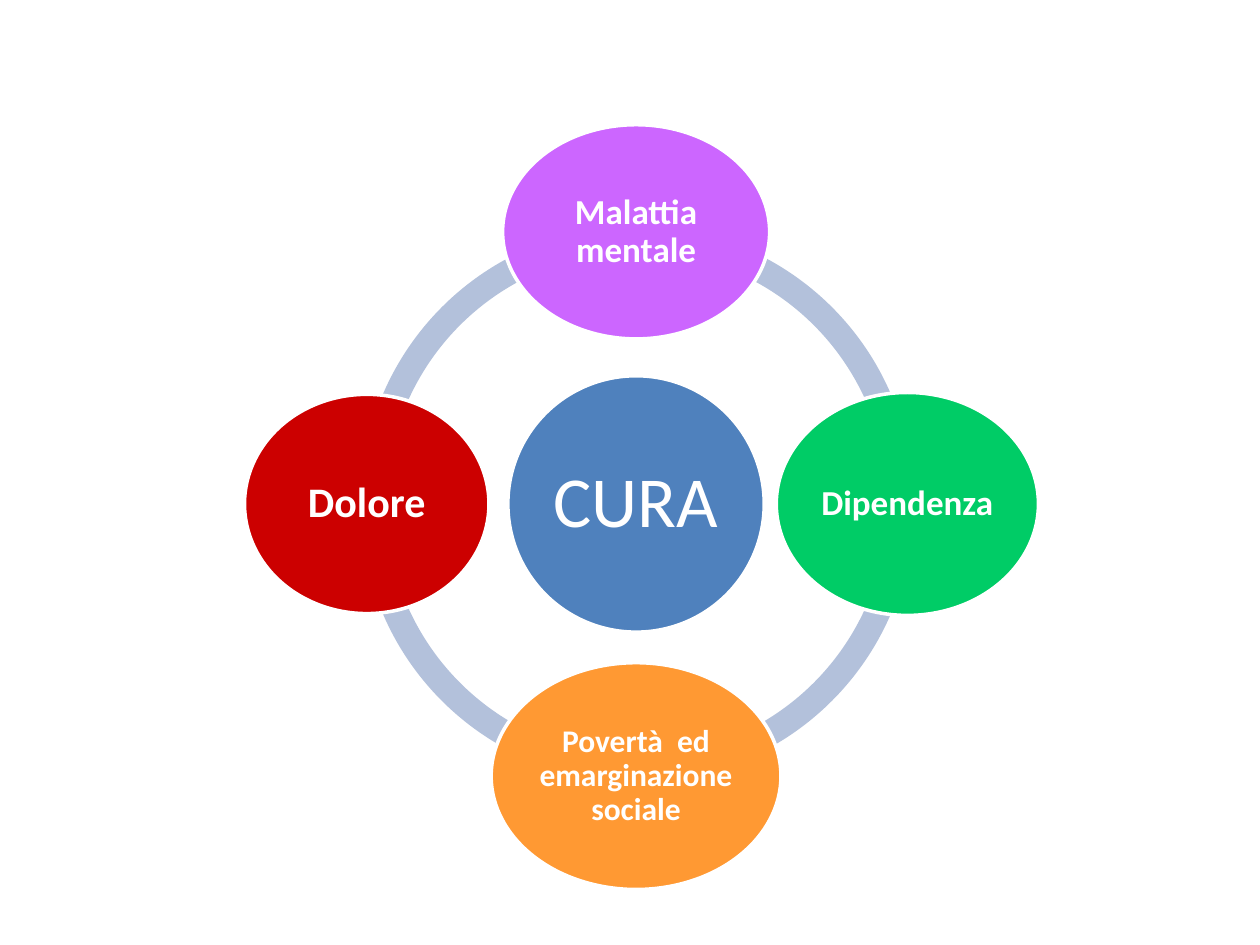
from pptx import Presentation
from pptx.dml.color import RGBColor
from pptx.enum.shapes import MSO_SHAPE
from pptx.enum.text import MSO_ANCHOR, PP_ALIGN
from pptx.util import Pt

BLOCK_ARC = MSO_SHAPE.BLOCK_ARC
OVAL = MSO_SHAPE.OVAL
MIDDLE = MSO_ANCHOR.MIDDLE
CENTER = PP_ALIGN.CENTER

FONT = "Calibri"
WHITE = "FFFFFF"
RING_COLOR = "B3C1DB"
RING_SIZE = 318.2
RING_TOP = 128.9
RING_THICKNESS = 0.046
QUARTER = 54  # 90 degrees in adjustment units

# Left edge and start quarter of each arc, clockwise from the right
ARCS = [(205.9, 2), (205.9, 1), (203.8, 0), (203.8, 3)]

# Text, centre x, centre y, width, height, fill, font size, bold, inset
DISCS = [
    ("CURA", 363.5, 288, 146.5, 146.5, "4F81BD", 41, False, 4.1),
    ("Malattia mentale", 363.5, 132.5, 152.6, 122.4, "CC66FF", 20, True, 2),
    ("Dipendenza", 518.5, 288, 149.8, 127.4, "00CC66", 20, True, 2),
    ("Povertà  ed emarginazione sociale", 363.5, 443.5, 165.6, 129.6,
     "FF9933", 18, True, 2),
    ("Dolore", 209.6, 288, 139.7, 125.3, "CC0000", 24, True, 2),
]


def rgb(hex_color):
    return RGBColor.from_string(hex_color)


def add_filled(slide, kind, x, y, w, h, color):
    sp = slide.shapes.add_shape(kind, Pt(x), Pt(y), Pt(w), Pt(h))
    sp.shadow.inherit = False
    sp.fill.solid()
    sp.fill.fore_color.rgb = rgb(color)
    return sp


def add_arc(slide, x, quarter):
    sp = add_filled(slide, BLOCK_ARC, x, RING_TOP, RING_SIZE, RING_SIZE,
                    RING_COLOR)
    sp.line.fill.background()
    sp.adjustments[0] = quarter * QUARTER
    sp.adjustments[1] = (quarter + 1) % 4 * QUARTER
    sp.adjustments[2] = RING_THICKNESS


def add_disc(slide, text, cx, cy, w, h, color, size, bold, inset):
    sp = add_filled(slide, OVAL, cx - w / 2, cy - h / 2, w, h, color)
    sp.line.color.rgb = rgb(WHITE)
    sp.line.width = Pt(2)
    tf = sp.text_frame
    tf.word_wrap = True
    tf.vertical_anchor = MIDDLE
    tf.margin_left = tf.margin_right = Pt(inset)
    tf.margin_top = tf.margin_bottom = Pt(inset)
    p = tf.paragraphs[0]
    p.alignment = CENTER
    p.line_spacing = 0.9
    r = p.add_run()
    r.text = text
    r.font.name = FONT
    r.font.size = Pt(size)
    r.font.bold = bold
    r.font.color.rgb = rgb(WHITE)


def main():
    prs = Presentation()
    prs.slide_width, prs.slide_height = Pt(720), Pt(540)
    slide = prs.slides.add_slide(prs.slide_layouts[6])
    for arc in ARCS:
        add_arc(slide, *arc)
    for disc in DISCS:
        add_disc(slide, *disc)
    prs.save("out.pptx")


if __name__ == "__main__":
    main()
